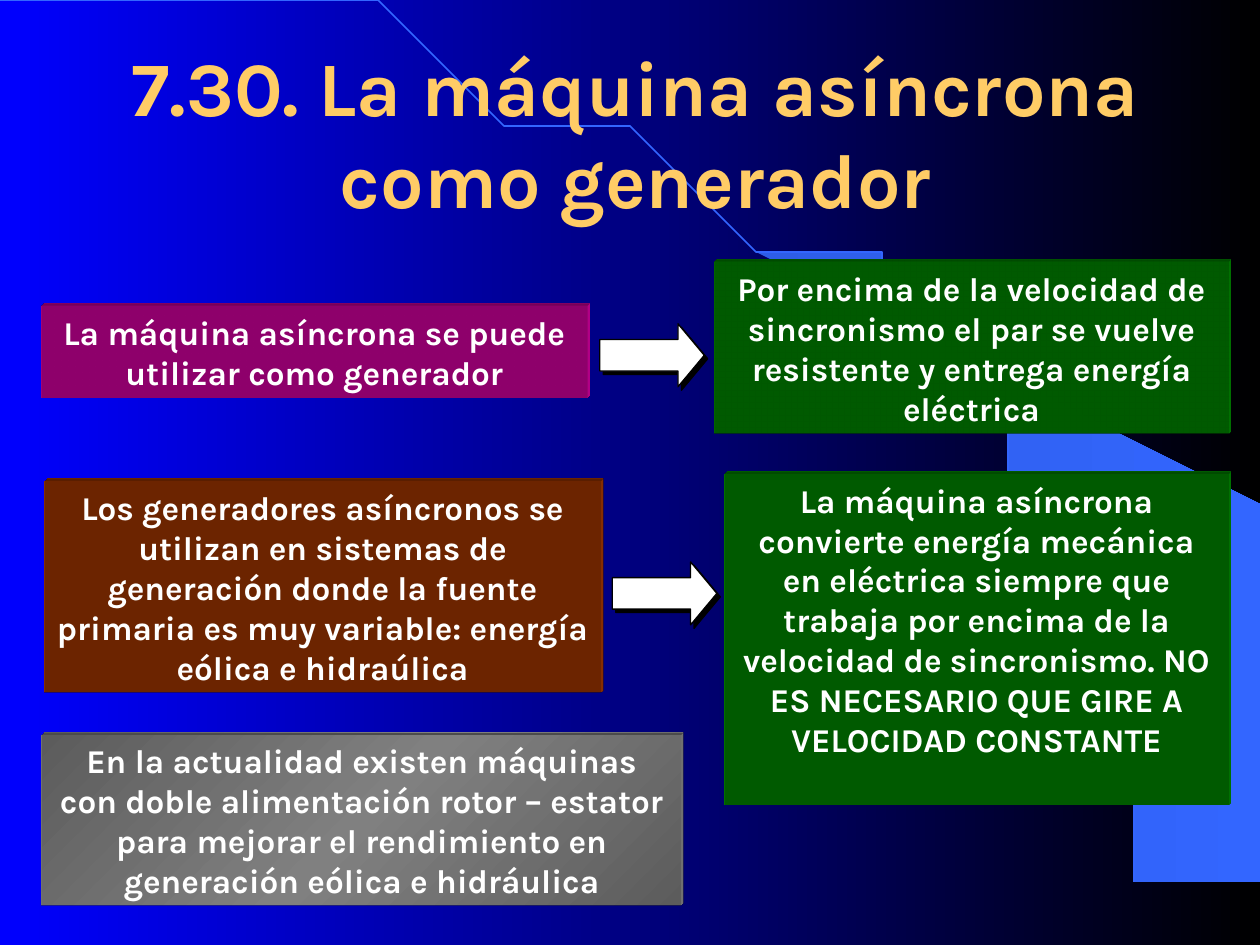
from copy import deepcopy
from math import cos, pi, sin

from pptx import Presentation
from pptx.dml.color import RGBColor
from pptx.enum.shapes import MSO_SHAPE as SHAPE
from pptx.enum.text import MSO_ANCHOR as ANCHOR, MSO_AUTO_SIZE as AUTO, PP_ALIGN as ALIGN
from pptx.oxml import parse_xml
from pptx.oxml.ns import nsdecls, qn
from pptx.util import Inches, Pt

TITLE = "7.30. La máquina asíncrona como generador"
GRAY = ["5C5C5C", "808080", "5C5C5C"]
# left, top, width, height, fill, text
BOXES = [
    (0.33, 2.43, 4.33, 0.73, "CC0099",
     "La máquina asíncrona se puede utilizar como generador"),
    (5.67, 2.08, 4.08, 1.36, "008000",
     "Por encima de la velocidad de sincronismo el par se vuelve resistente "
     "y entrega energía eléctrica"),
    (0.35, 3.82, 4.42, 1.68, "993300",
     "Los generadores asíncronos se utilizan en sistemas de generación donde "
     "la fuente primaria es muy variable: energía eólica e hidraúlica"),
    (5.75, 3.76, 4, 2.63, "008000",
     "La máquina asíncrona convierte energía mecánica en eléctrica siempre que "
     "trabaja por encima de la velocidad de sincronismo. NO ES NECESARIO QUE "
     "GIRE A VELOCIDAD CONSTANTE"),
    (0.33, 5.83, 5.08, 1.36, GRAY,
     "En la actualidad existen máquinas con doble alimentación rotor – estator "
     "para mejorar el rendimiento en generación eólica e hidráulica"),
]
ARROWS = [(4.76, 2.57), (4.86, 4.46)]
ARROW_SIZE = (0.83, 0.5)
CRESCENT = [
    (9.2, 7.48), (9.99, 7.49), (9.99, 4.23), (5.89, 1.73), (6.24, 1.99), (6.53, 2.22),
    (6.85, 2.5), (7.16, 2.8), (7.62, 3.3), (8.03, 3.84), (8.32, 4.31), (8.58, 4.79),
    (8.78, 5.28), (8.93, 5.72), (9.03, 6.09), (9.13, 6.56), (9.17, 6.96),
]
ARC_RX, ARC_RY, ARC_STEPS = 9.2, 7.49, 60

SHADOW = (f'<a:effectLst {nsdecls("a")}><a:outerShdw dist="35560" dir="2700000" '
          'algn="ctr" rotWithShape="0"><a:srgbClr val="000000"/></a:outerShdw></a:effectLst>')
SCENE = (f'<a:scene3d {nsdecls("a")}><a:camera prst="legacyObliqueTopRight"/>'
         '<a:lightRig rig="legacyFlat3" dir="b"/></a:scene3d>')
EXTRUSION = (f'<a:sp3d {nsdecls("a")} extrusionH="49200" prstMaterial="legacyMatte">'
             '<a:bevelT w="13500" h="13500" prst="angle"/>'
             '<a:bevelB w="13500" h="13500" prst="angle"/>'
             '<a:extrusionClr><a:srgbClr val="{}"/></a:extrusionClr></a:sp3d>')


def rgb(color):
    return RGBColor.from_string(color)


def paint_gradient(fill, colors, angle=0):
    fill.gradient()
    fill.gradient_angle = angle
    for stop, color, position in zip(fill.gradient_stops, colors, (0, 1)):
        stop.color.rgb = rgb(color)
        stop.position = position


def paint_mirrored(sp, colors, angle):
    """Three-stop gradient: the middle stop is added between the two ends."""
    paint_gradient(sp.fill, (colors[0], colors[2]), angle)
    stops = sp.element.spPr.find(".//" + qn("a:gsLst"))
    stops.insert(1, deepcopy(stops[0]))
    middle = sp.fill.gradient_stops[1]
    middle.position, middle.color.rgb = 0.5, rgb(colors[1])


def write(sp, text, size, color, **frame):
    tf = sp.text_frame
    for name, value in {"word_wrap": True, **frame}.items():
        setattr(tf, name, value)
    p = tf.paragraphs[0]
    p.alignment = ALIGN.CENTER
    r = p.add_run()
    r.text = text
    for name, value in {"name": "Karla", "size": Pt(size), "bold": True}.items():
        setattr(r.font, name, value)
    r.font.color.rgb = rgb(color)


def add_freeform(shapes, points, close):
    builder = shapes.build_freeform(*points[0], scale=Inches(1))
    builder.add_line_segments(points[1:], close=close)
    sp = builder.convert_to_shape()
    sp.shadow.inherit = False
    return sp


def add_preset(shapes, kind, *place):
    sp = shapes.add_shape(kind, *map(Inches, place))
    sp.shadow.inherit = False
    return sp


def add_box(shapes, left, top, width, height, fill, text):
    sp = add_preset(shapes, SHAPE.RECTANGLE, left, top, width, height)
    if isinstance(fill, list):
        paint_mirrored(sp, fill, 315)
        side = fill[1]
    else:
        sp.fill.solid()
        sp.fill.fore_color.rgb = rgb(fill)
        side = fill
    sp.line.fill.background()
    for xml in (SCENE, EXTRUSION.format(side)):
        sp.element.spPr.append(parse_xml(xml))
    write(sp, text, 19, "FFFFFF", vertical_anchor=ANCHOR.TOP,
          auto_size=AUTO.SHAPE_TO_FIT_TEXT)


def add_arrow(shapes, left, top):
    sp = add_preset(shapes, SHAPE.RIGHT_ARROW, left, top, *ARROW_SIZE)
    sp.adjustments[0], sp.adjustments[1] = 0.5, 0.417
    sp.fill.solid()
    sp.fill.fore_color.rgb = rgb("FFFFFF")
    sp.line.color.rgb = rgb("000000")
    sp.line.width = Pt(0.75)
    spPr = sp.element.spPr
    spPr.replace(spPr.find(qn("a:effectLst")), parse_xml(SHADOW))


def main():
    prs = Presentation()
    prs.slide_width, prs.slide_height = Inches(10), Inches(7.5)
    s = prs.slides.add_slide(prs.slide_layouts[6])
    paint_gradient(s.background.fill, ("0000FF", "000000"))

    crescent = add_freeform(s.shapes, CRESCENT, True)
    paint_gradient(crescent.fill, ("2E5DE7", "3366FF"))
    crescent.line.fill.background()

    angles = [pi / 2 * i / ARC_STEPS for i in range(ARC_STEPS + 1)]
    arc = add_freeform(s.shapes, [(ARC_RX * sin(a), ARC_RY * (1 - cos(a))) for a in angles], False)
    arc.fill.background()
    arc.line.color.rgb = rgb("3366FF")
    arc.line.width = Pt(1)

    title = s.shapes.add_textbox(*map(Inches, (0.17, 0.42, 9.75, 1.25)))
    write(title, TITLE, 44, "FFCC66", vertical_anchor=ANCHOR.MIDDLE)

    for box in BOXES:
        add_box(s.shapes, *box)
    for place in ARROWS:
        add_arrow(s.shapes, *place)
    prs.save("out.pptx")


if __name__ == "__main__":
    main()
